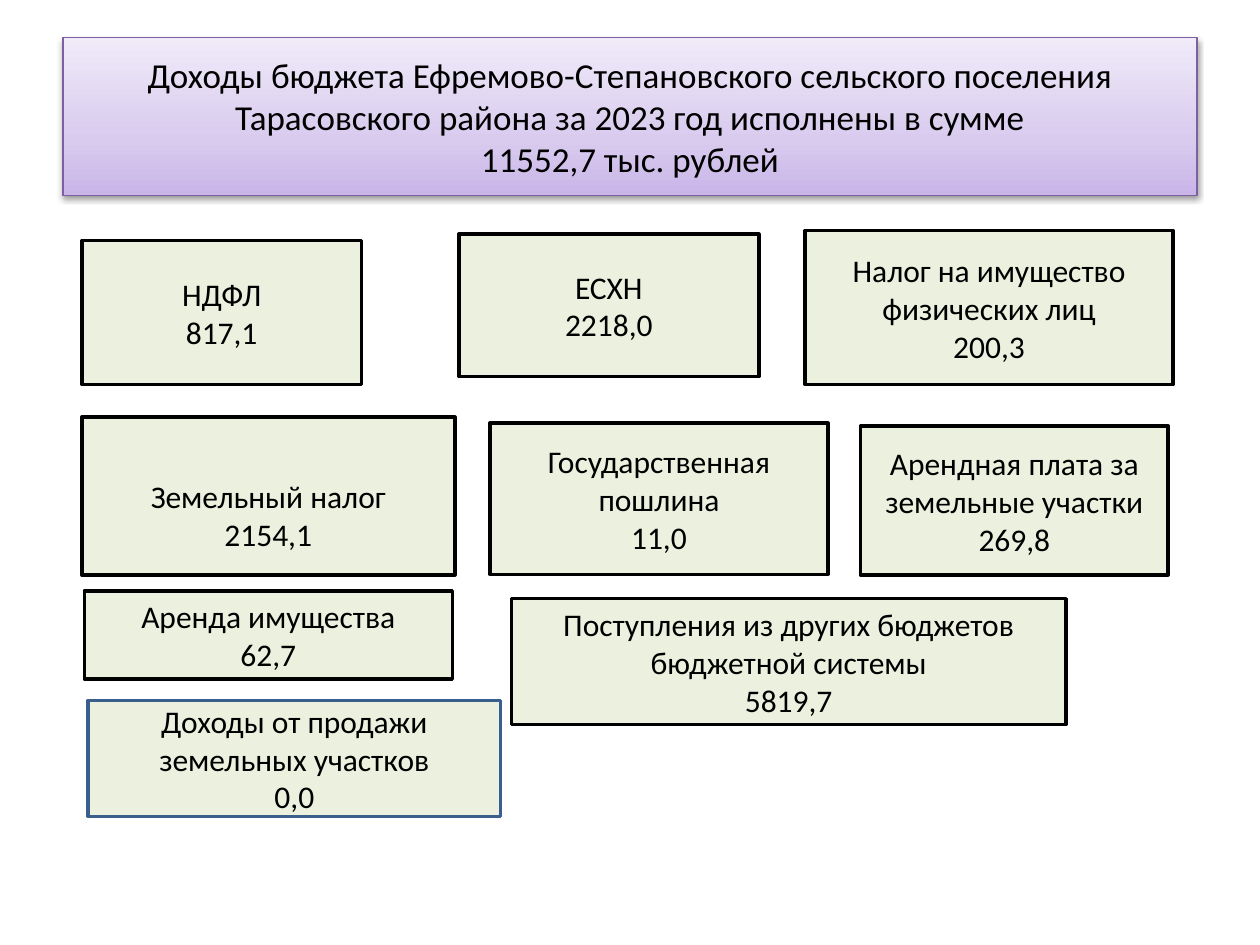
import copy

import pptx
import pptx.dml.color
import pptx.enum.shapes
import pptx.enum.text
import pptx.oxml
import pptx.oxml.ns
import pptx.util
from lxml import etree

Cm, Pt = pptx.util.Cm, pptx.util.Pt
qn = pptx.oxml.ns.qn

TITLE = ("Доходы бюджета Ефремово-Степановского сельского поселения "
         "Тарасовского района за 2023 год исполнены в сумме\v"
         "11552,7 тыс. рублей")

# name, value, (left, top, width, height) in cm, options
INCOMES = [
    ("НДФЛ", "817,1", (1.65, 4.85, 5.64, 2.9), {}),
    ("ЕСХН", "2218,0", (9.25, 4.72, 6.05, 2.87), {}),
    ("Налог на имущество физических лиц", "200,3", (16.23, 4.65, 7.42, 3.1), {}),
    ("Земельный налог", "2154,1", (1.65, 8.41, 7.52, 3.18), {"margin_top": 0.9}),
    ("Государственная пошлина", "11,0", (9.88, 8.53, 6.81, 3.05), {}),
    ("Арендная плата за земельные участки", "269,8", (17.35, 8.59, 6.2, 3), {}),
    ("Поступления из других бюджетов бюджетной системы", "5819,7",
     (10.31, 12.07, 11.18, 2.54), {}),
    ("Аренда имущества", "62,7", (1.7, 11.91, 7.42, 1.78), {}),
    ("Доходы от продажи земельных участков", "0,0",
     (1.78, 14.12, 8.31, 2.34), {"line": "3A5F8C"}),
]

SHADOW = """<a:effectLst xmlns:a="http://schemas.openxmlformats.org/drawingml/2006/main">
  <a:outerShdw blurRad="40000" dist="20000" dir="5400000" rotWithShape="0">
    <a:srgbClr val="000000"><a:alpha val="38000"/></a:srgbClr>
  </a:outerShdw>
</a:effectLst>"""


def rgb(value):
    return pptx.dml.color.RGBColor.from_string(value)


class Deck:
    font = "Calibri"
    text = "000000"
    box_fill = "EBF1DE"
    title_stops = [(0, "C9B5E8"), (0.35, "D8CBEE"), (1, "F0EAF9")]
    title_line = "7D60A0"

    def __init__(self, slide):
        self.s = slide

    def outline(self, sp, color, width):
        sp.line.color.rgb = rgb(color)
        sp.line.width = Pt(width)

    def set_text(self, sp, text, size):
        tf = sp.text_frame
        tf.text = text
        tf.word_wrap = True
        tf.auto_size = pptx.enum.text.MSO_AUTO_SIZE.NONE
        tf.vertical_anchor = pptx.enum.text.MSO_ANCHOR.MIDDLE
        for p in tf.paragraphs:
            p.alignment = pptx.enum.text.PP_ALIGN.CENTER
            for r in p.runs:
                r.font.name = self.font
                r.font.size = Pt(size)
                r.font.color.rgb = rgb(self.text)
            for br in p._p.findall(qn("a:br")):
                etree.SubElement(br, qn("a:rPr"), sz=str(size * 100))

    def title(self, text, at):
        sp = self.s.shapes.title
        sp.left, sp.top, sp.width, sp.height = map(Cm, at)
        self.set_text(sp, text, 20)
        sp.fill.gradient()
        sp.fill.gradient_angle = 90
        stops = sp._element.spPr.find(".//" + qn("a:gsLst"))
        stops.insert(1, copy.deepcopy(stops[0]))
        for stop, (position, color) in zip(sp.fill.gradient_stops, self.title_stops):
            stop.position = position
            stop.color.rgb = rgb(color)
        self.outline(sp, self.title_line, 0.75)
        sp._element.spPr.append(pptx.oxml.parse_xml(SHADOW))

    def box(self, name, value, at, line="000000", margin_top=0.13):
        sp = self.s.shapes.add_shape(
            pptx.enum.shapes.MSO_SHAPE.RECTANGLE, *map(Cm, at))
        sp.shadow.inherit = False
        sp.fill.solid()
        sp.fill.fore_color.rgb = rgb(self.box_fill)
        self.outline(sp, line, 2)
        self.set_text(sp, f"{name}\n{value}", 18)
        sp.text_frame.margin_top = Cm(margin_top)


def main():
    prs = pptx.Presentation()
    prs.slide_width, prs.slide_height = Cm(25.4), Cm(19.05)
    deck = Deck(prs.slides.add_slide(prs.slide_layouts[5]))
    deck.title(TITLE, (1.27, 0.76, 22.86, 3.18))
    for name, value, at, options in INCOMES:
        deck.box(name, value, at, **options)
    prs.save("out.pptx")


if __name__ == "__main__":
    main()
